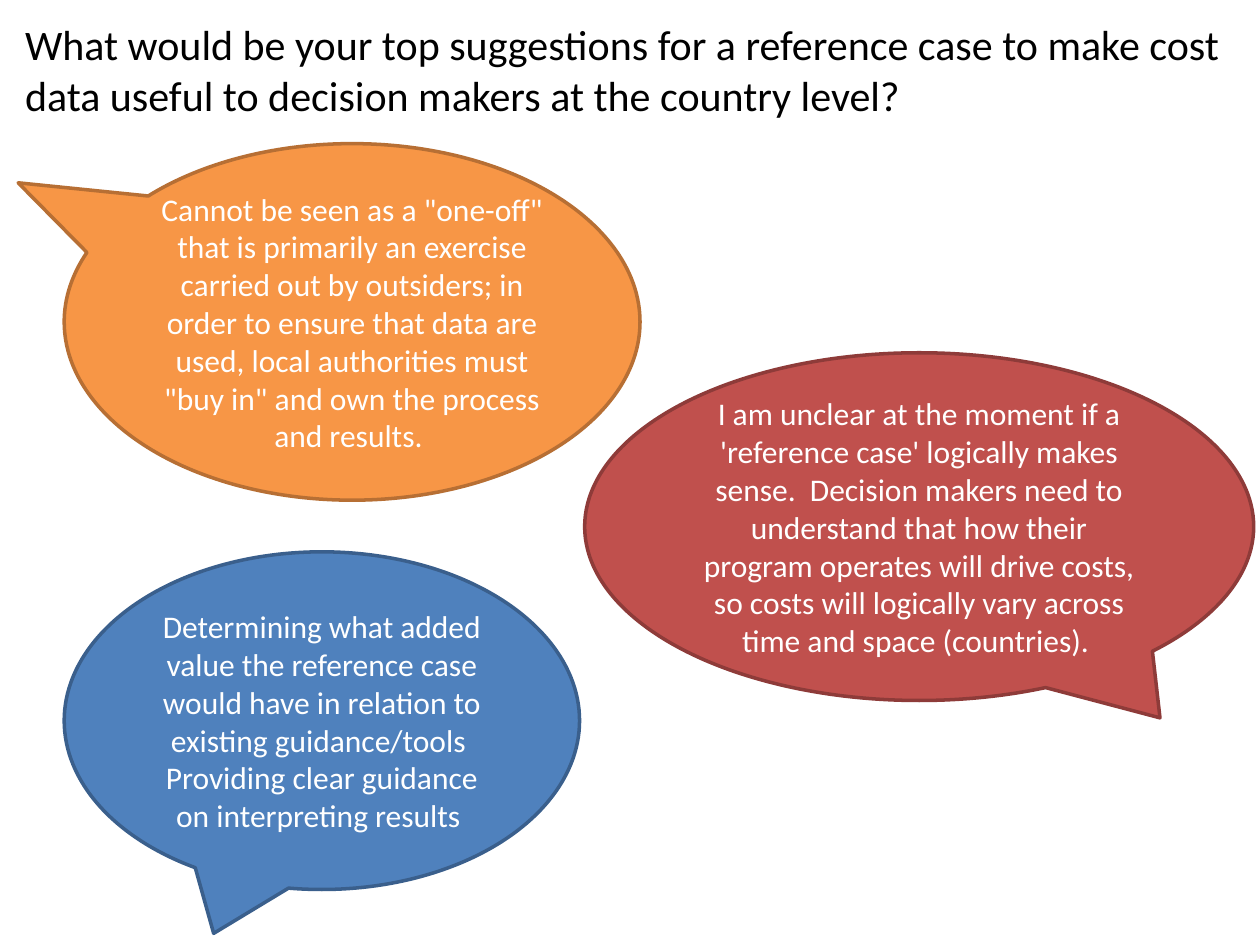
from dataclasses import dataclass

from pptx import Presentation, util as u
from pptx.dml.color import RGBColor
from pptx.enum import shapes, text


@dataclass(frozen=True)
class Theme:
    font: str = "Calibri"
    question_size: int = 24
    comment_size: int = 18
    outline_width: int = 2
    ink: str = "000000"
    paper: str = "FFFFFF"
    # Each pair is fill and outline
    orange: tuple = ("F79646", "B76F34")
    red: tuple = ("C0504D", "8E3B39")
    blue: tuple = ("4F81BD", "3A5F8C")


class CommentSlide:
    """Places elements on a grid of 100 columns and 75 rows."""

    COLUMNS, ROWS = 100, 75

    def __init__(self, presentation, theme):
        self.theme = theme
        self.slide = presentation.slides.add_slide(presentation.slide_layouts[6])
        self.column = presentation.slide_width / self.COLUMNS
        self.row = presentation.slide_height / self.ROWS

    def box(self, left, top, width, height):
        return (round(left * self.column), round(top * self.row),
                round(width * self.column), round(height * self.row))

    def set_words(self, shape, words, size, color, alignment):
        frame = shape.text_frame
        frame.word_wrap = True
        paragraph = frame.paragraphs[0]
        paragraph.text = words
        paragraph.alignment = alignment
        paragraph.font.name = self.theme.font
        paragraph.font.size = u.Pt(size)
        paragraph.font.color.rgb = RGBColor.from_string(color)
        return frame

    def question(self, words, area):
        shape = self.slide.shapes.add_textbox(*self.box(*area))
        frame = self.set_words(shape, words, self.theme.question_size,
                               self.theme.ink, text.PP_ALIGN.LEFT)
        frame.auto_size = text.MSO_AUTO_SIZE.SHAPE_TO_FIT_TEXT

    def bubble(self, words, area, colors, tip):
        """Add a speech bubble; tip is its offset from the centre in shares of its size."""
        shape = self.slide.shapes.add_shape(
            shapes.MSO_SHAPE.OVAL_CALLOUT, *self.box(*area))
        shape.shadow.inherit = False
        shape.adjustments[0], shape.adjustments[1] = tip
        fill, outline = colors
        shape.fill.solid()
        shape.fill.fore_color.rgb = RGBColor.from_string(fill)
        shape.line.color.rgb = RGBColor.from_string(outline)
        shape.line.width = u.Pt(self.theme.outline_width)
        frame = self.set_words(shape, words, self.theme.comment_size,
                               self.theme.paper, text.PP_ALIGN.CENTER)
        frame.vertical_anchor = text.MSO_ANCHOR.MIDDLE


def main():
    presentation = Presentation()
    presentation.slide_width = u.Inches(10)
    presentation.slide_height = u.Inches(7.5)
    theme = Theme()
    slide = CommentSlide(presentation, theme)

    slide.question(
        "What would be your top suggestions for a reference case to make cost "
        "data useful to decision makers at the country level?",
        (1, 1, 96.9, 6.2))
    slide.bubble(
        'Cannot be seen as a "one-off" that is primarily an exercise carried out '
        "by outsiders; in order to ensure that data are used, local authorities "
        'must "buy in" and own the process and results. ',
        (5.1, 11.4, 45.7, 28.3), theme.orange, (-0.58, -0.39))
    slide.bubble(
        "I am unclear at the moment if a 'reference case' logically makes sense.  "
        "Decision makers need to understand that how their program operates will "
        "drive costs, so costs will logically vary across time and space "
        "(countries). ",
        (46.4, 28, 53.1, 27.6), theme.red, (0.36, 0.55))
    slide.bubble(
        "Determining what added value the reference case would have in relation "
        "to existing guidance/tools  Providing clear guidance on interpreting "
        "results ",
        (5.1, 43.8, 40.9, 26.8), theme.blue, (-0.21, 0.63))

    presentation.save("out.pptx")


if __name__ == "__main__":
    main()
